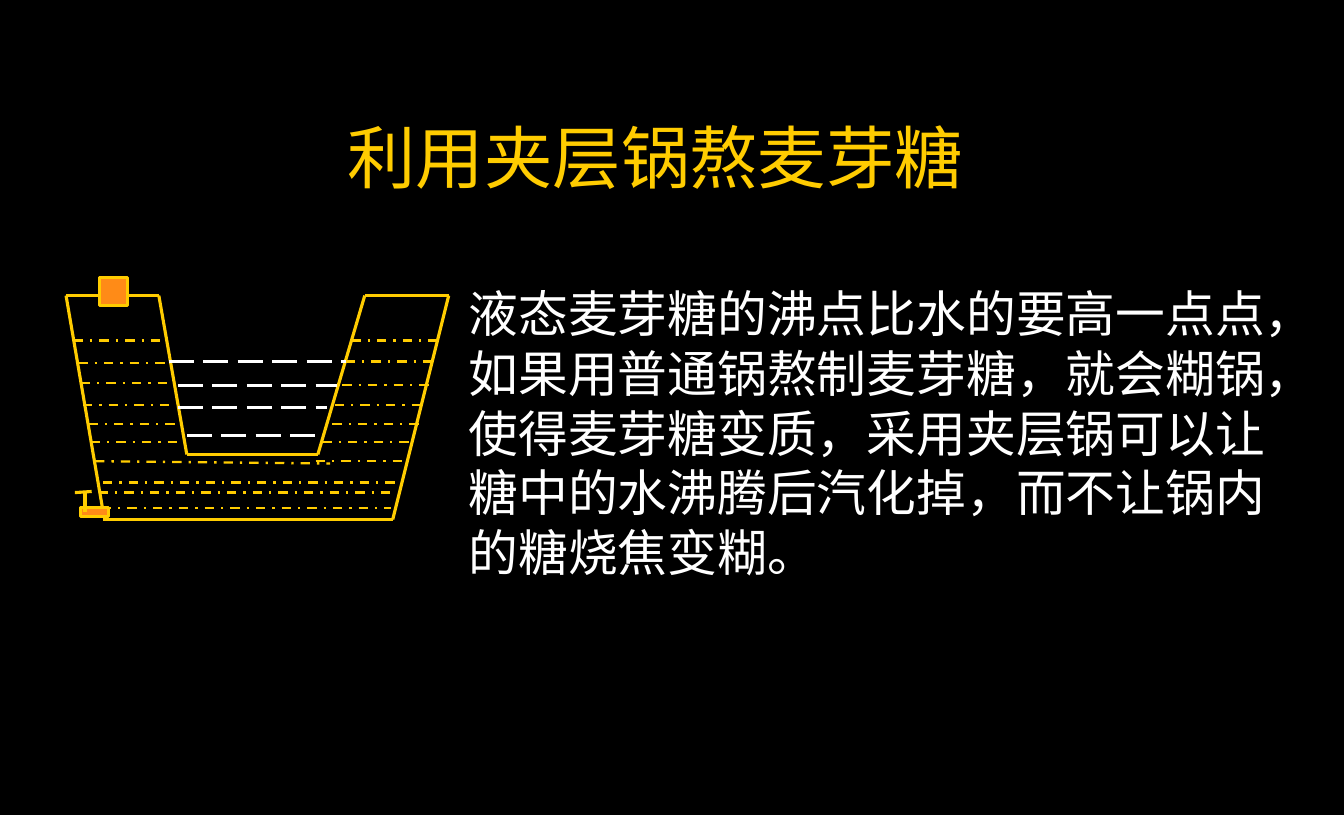
import pptx
import pptx.dml.color
import pptx.enum.dml
import pptx.enum.shapes
import pptx.enum.text
import pptx.oxml.ns
import pptx.util
from lxml import etree

Pt = pptx.util.Pt
DASH = pptx.enum.dml.MSO_LINE
GOLD, ORANGE, WHITE, BLACK = "FFCC00", "FF8B17", "FFFFFF", "000000"
FONT = "Times New Roman"


def rgb(value):
    return pptx.dml.color.RGBColor.from_string(value)


def add_line(shapes, box, start, end, color=GOLD, width=2, dash=None):
    """Draw a line between two points measured from the box's corner."""
    left, top = box[:2]
    s = shapes.add_connector(
        pptx.enum.shapes.MSO_CONNECTOR.STRAIGHT,
        Pt(left + start[0]), Pt(top + start[1]),
        Pt(left + end[0]), Pt(top + end[1]))
    s.line.color.rgb = rgb(color)
    s.line.width = Pt(width)
    if dash:
        s.line.dash_style = dash
    etree.SubElement(s._element.spPr, pptx.oxml.ns.qn("a:effectLst"))


def add_block(shapes, box, x, y, w, h):
    s = shapes.add_shape(pptx.enum.shapes.MSO_SHAPE.RECTANGLE,
                         Pt(box[0] + x), Pt(box[1] + y), Pt(w), Pt(h))
    s.shadow.inherit = False
    s.fill.solid()
    s.fill.fore_color.rgb = rgb(ORANGE)
    s.line.color.rgb = rgb(GOLD)
    s.line.width = Pt(2)


def add_text(slide, box, text, size, color, wrap):
    tf = slide.shapes.add_textbox(*map(Pt, box)).text_frame
    tf.word_wrap = wrap
    tf.auto_size = pptx.enum.text.MSO_AUTO_SIZE.SHAPE_TO_FIT_TEXT
    tf.text = text
    r = tf.paragraphs[0].runs[0]
    r.font.name = FONT
    r.font.size = Pt(size)
    r.font.color.rgb = rgb(color)


def add_pot(slide, box):
    """Draw the pot's double wall with its valve, plug and water."""
    shapes = slide.shapes.add_group_shape().shapes
    rim, inner_base, base = 11.6, 113.8, 155.6
    walls = [
        ((0, rim), (23.7, rim)),
        ((192.2, rim), (246.2, rim)),
        ((23.7, base), (210.2, base)),
        ((0, rim), (23.7, 149.8)),
        ((246.2, rim), (210.2, base)),
        ((59.7, rim), (77.7, inner_base)),
        ((192.2, rim), (162, inner_base)),
        ((77.7, inner_base), (162, inner_base)),
        ((36, rim), (59.7, rim)),
    ]
    valve = [((12.2, 138.3), (12.2, 150.5)), ((5.7, 138.3), (16.5, 137.6))]
    for start, end in walls:
        add_line(shapes, box, start, end)
    add_block(shapes, box, 9.3, 147.7, 18, 5.8)
    for start, end in valve:
        add_line(shapes, box, start, end)
    add_block(shapes, box, 21.6, 0, 18, 18)

    bottom_water = [
        ((20.9, 138.3), (212.4, 138.3)),
        ((23, 148.4), (208.8, 148.4)),
        ((23.7, 131.8), (214.5, 131.8)),
        ((18.7, 118.1), (169.9, 119.6)),
    ]
    left_water = [(15.8, 105.9), (14.4, 94.4), (10.8, 82.1),
                  (9.4, 67.7), (7.9, 54.8), (5, 40.4)]
    right_water = [(160.6, 118.1), (164.9, 105.9), (171.4, 94.4),
                   (172.8, 82.1), (177.8, 69.2), (180, 54.1), (183.6, 40.4)]
    side_water = [((x, y), (x + length, y))
                  for points, length in ((left_water, 57.2), (right_water, 55.5))
                  for x, y in points]
    for start, end in bottom_water + side_water:
        add_line(shapes, box, start, end, width=1.5, dash=DASH.DASH_DOT)


def add_syrup(slide, box):
    levels = [(77.7, 162, 101.6), (72, 167.8, 83.6),
              (72, 174.2, 69.2), (66.2, 180, 54.1)]
    for x1, x2, y in levels:
        add_line(slide.shapes, box, (x1, y), (x2, y), WHITE, dash=DASH.LONG_DASH)


def main():
    prs = pptx.Presentation()
    prs.slide_width, prs.slide_height = Pt(864.72), Pt(524.16)
    slide = prs.slides.add_slide(prs.slide_layouts[6])
    slide.background.fill.solid()
    slide.background.fill.fore_color.rgb = rgb(BLACK)

    pot_box = (42.5, 178.5, 246.2, 155.6)
    add_text(slide, (216.5, 70.6, 412, 59.8), "利用夹层锅熬麦芽糖", 44, GOLD, False)
    add_pot(slide, pot_box)
    add_syrup(slide, pot_box)
    add_text(slide, (294.5, 178.5, 540, 199.4),
             "液态麦芽糖的沸点比水的要高一点点，如果用普通锅熬制麦芽糖，就会糊锅，"
             "使得麦芽糖变质，采用夹层锅可以让糖中的水沸腾后汽化掉，"
             "而不让锅内的糖烧焦变糊。", 32, WHITE, True)
    prs.save("out.pptx")


if __name__ == "__main__":
    main()
